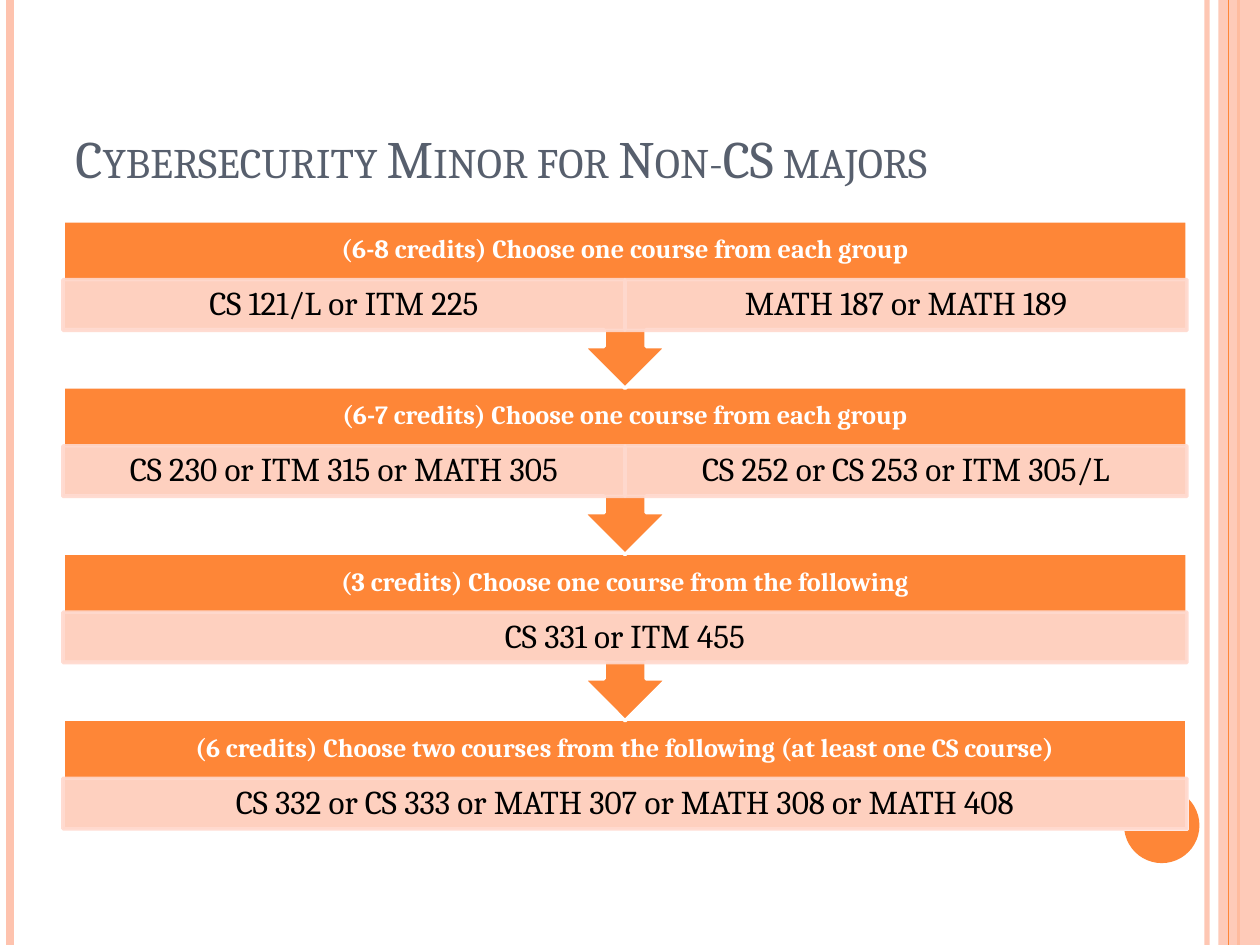
from pptx import Presentation
from pptx.dml.color import RGBColor
from pptx.enum.shapes import MSO_CONNECTOR, MSO_SHAPE
from pptx.enum.text import MSO_ANCHOR, MSO_AUTO_SIZE, PP_ALIGN
from pptx.oxml.ns import qn
from pptx.util import Cm, Pt
from lxml.etree import SubElement

ORANGE = RGBColor(0xFE, 0x86, 0x37)
PEACH = RGBColor(0xFE, 0xC3, 0xAE)
PALE = RGBColor(0xFF, 0xD9, 0xCE)
SLATE = RGBColor(0x57, 0x5F, 0x6D)
WHITE = RGBColor(0xFF, 0xFF, 0xFF)
BLACK = RGBColor(0, 0, 0)

FONT = "Cambria"
SLIDE_W, SLIDE_H = 25.4, 19.05
LEFT, TOP, WIDTH = 1.27, 4.45, 22.66
PITCH, CALLOUT_H, BLOCK_H = 3.35, 3.38, 2.21
HEADING_H, COURSE_H = 1.19, 1.02

STEPS = [
    ("(6-8 credits) Choose one course from each group",
     ["CS 121/L or ITM 225", "MATH 187 or MATH 189"]),
    ("(6-7 credits) Choose one course from each group",
     ["CS 230 or ITM 315 or MATH 305", "CS 252 or CS 253 or ITM 305/L"]),
    ("(3 credits) Choose one course from the following",
     ["CS 331 or ITM 455"]),
    ("(6 credits) Choose two courses from the following (at least one CS course)",
     ["CS 332 or CS 333 or MATH 307 or MATH 308 or MATH 408"]),
]


def set_alpha(element, percent):
    for color in element.iter(qn("a:srgbClr")):
        SubElement(color, qn("a:alpha")).set("val", str(percent * 1000))


def add_rule(slide, x, color, width, alpha=100):
    s = slide.shapes.add_connector(
        MSO_CONNECTOR.STRAIGHT, Cm(x), 0, Cm(x), Cm(SLIDE_H))
    s.line.color.rgb = color
    s.line.width = Pt(width)
    set_alpha(s.line._get_or_add_ln(), alpha)
    SubElement(s._element.spPr, qn("a:effectLst"))


def add_box(slide, kind, x, y, w, h, fill, line=None, alpha=100):
    s = slide.shapes.add_shape(kind, Cm(x), Cm(y), Cm(w), Cm(h))
    s.shadow.inherit = False
    s.fill.solid()
    s.fill.fore_color.rgb = fill
    if line is None:
        s.line.fill.background()
    else:
        s.line.color.rgb = line
        s.line.width = Pt(2)
    set_alpha(s._element.spPr, alpha)
    return s


def write(s, text, size, color, bold=False, inset=(0.38, 0.08),
          align=PP_ALIGN.CENTER, anchor=MSO_ANCHOR.MIDDLE):
    tf = s.text_frame
    tf.text = text
    tf.word_wrap = True
    tf.auto_size = MSO_AUTO_SIZE.NONE
    tf.vertical_anchor = anchor
    tf.margin_left = tf.margin_right = Cm(inset[0])
    tf.margin_top = tf.margin_bottom = Cm(inset[1])
    p = tf.paragraphs[0]
    p.alignment = align
    p.line_spacing = 0.9
    font = p.runs[0].font
    font.name, font.size, font.bold = FONT, Pt(size), bold
    font.color.rgb = color
    return p


def add_frame(slide):
    add_rule(slide, 24.33, PEACH, 3, 93)
    add_rule(slide, 0.2, PEACH, 4.5)
    add_rule(slide, 24.97, ORANGE, 1.5)
    add_box(slide, MSO_SHAPE.RECTANGLE, 24.56, 0, SLIDE_W - 24.56, SLIDE_H,
            PEACH, alpha=87)
    add_rule(slide, 24.77, ORANGE, 0.75)
    add_box(slide, MSO_SHAPE.OVAL, 22.66, 15.88, 1.52, 1.52, ORANGE)


def set_title(slide, text):
    s = slide.shapes.title
    s.left, s.top, s.width, s.height = Cm(1.27), Cm(0.76), Cm(20.75), Cm(3.18)
    p = write(s, text, 30, SLATE, inset=(0.25, 0.13),
              align=PP_ALIGN.LEFT, anchor=MSO_ANCHOR.BOTTOM)
    p.line_spacing = 1.0
    p.runs[0].font._element.set("cap", "small")


def add_step(slide, y, heading, courses, is_last):
    if is_last:
        add_box(slide, MSO_SHAPE.RECTANGLE, LEFT, y, WIDTH, BLOCK_H, ORANGE, WHITE)
    else:
        s = add_box(slide, MSO_SHAPE.UP_ARROW_CALLOUT, LEFT, y, WIDTH, CALLOUT_H,
                    ORANGE, WHITE)
        s.rotation = 180
    s = slide.shapes.add_textbox(Cm(LEFT), Cm(y), Cm(WIDTH), Cm(HEADING_H))
    write(s, heading, 15, WHITE, bold=True, inset=(0.3, 0.3))
    w = WIDTH / len(courses)
    for i, course in enumerate(courses):
        s = add_box(slide, MSO_SHAPE.RECTANGLE, LEFT + i * w,
                    y + BLOCK_H - COURSE_H, w, COURSE_H, PALE, PALE, 90)
        write(s, course, 19, BLACK)


def main():
    prs = Presentation()
    prs.slide_width, prs.slide_height = Cm(SLIDE_W), Cm(SLIDE_H)
    slide = prs.slides.add_slide(prs.slide_layouts[5])
    add_frame(slide)
    set_title(slide, "Cybersecurity Minor for Non-CS majors")
    last = len(STEPS) - 1
    for i, (heading, courses) in reversed(list(enumerate(STEPS))):
        add_step(slide, TOP + i * PITCH, heading, courses, i == last)
    prs.save("out.pptx")


if __name__ == "__main__":
    main()
